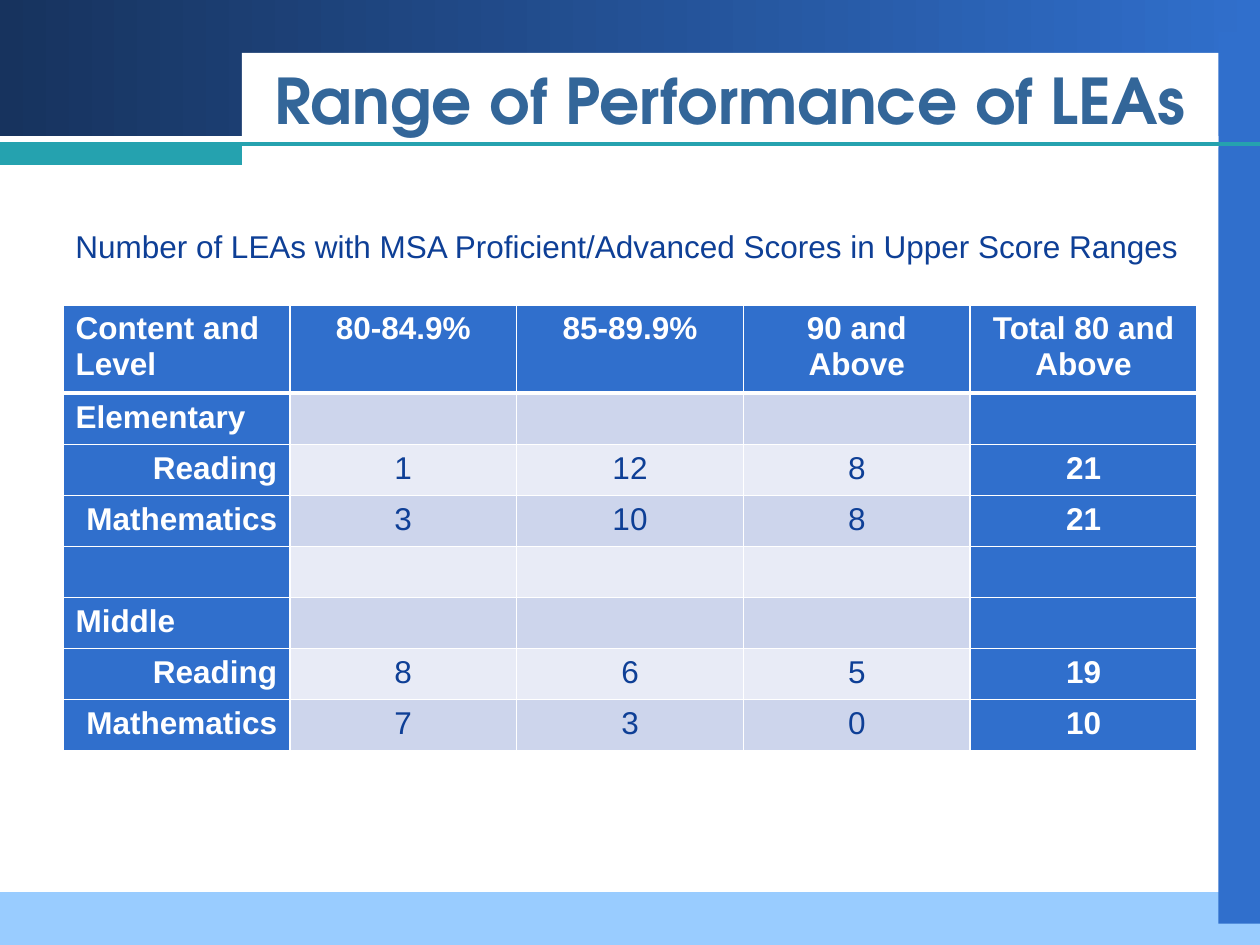
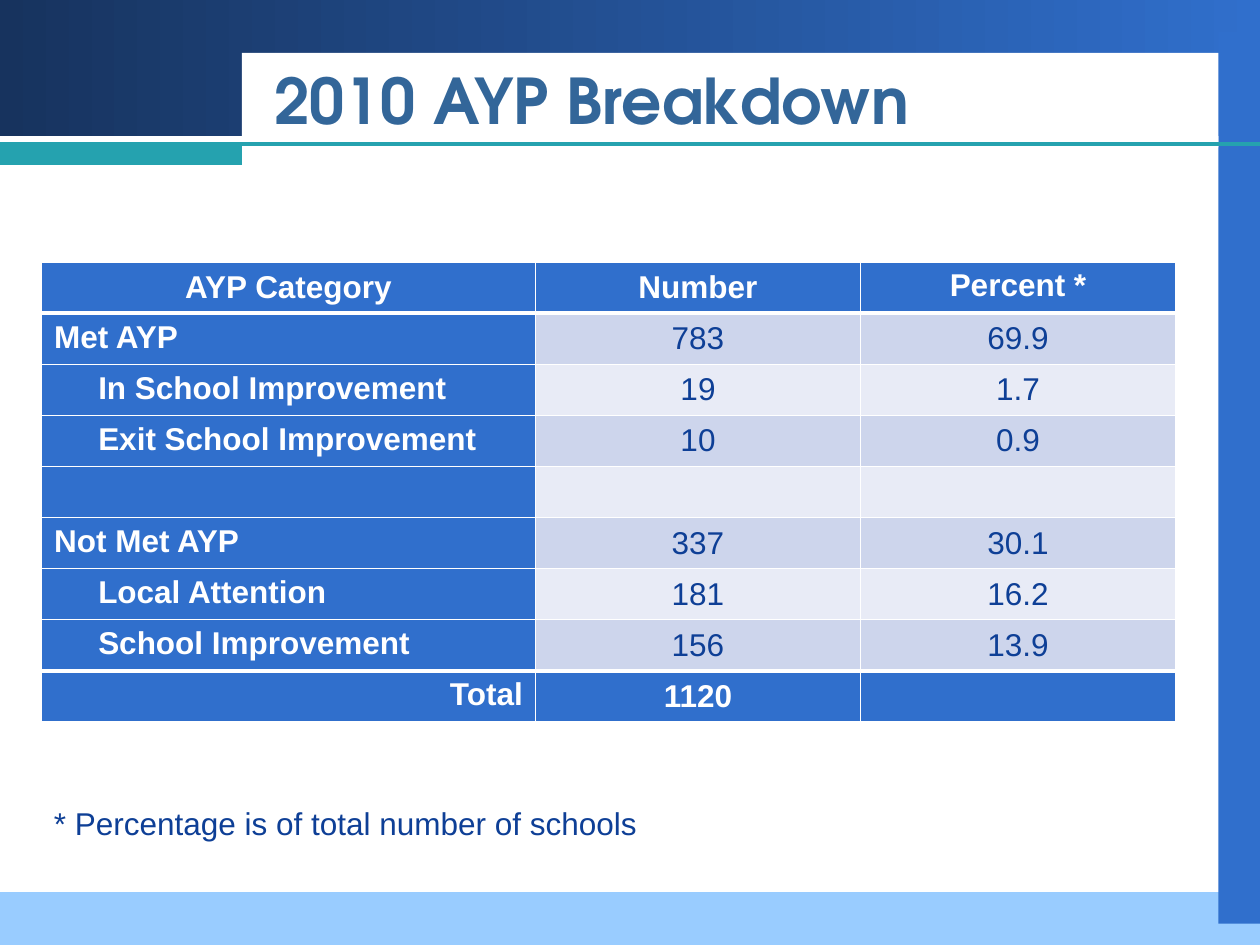
"""Build two slides of tables on LEA performance and AYP results."""
from dataclasses import dataclass

import lxml.etree
import pptx
import pptx.dml.color
import pptx.enum.dml
import pptx.enum.shapes
import pptx.enum.text
import pptx.oxml.ns
import pptx.util

Inches = pptx.util.Inches
Align = pptx.enum.text.PP_ALIGN
Anchor = pptx.enum.text.MSO_ANCHOR


@dataclass(frozen=True)
class Theme:
    navy: str = "17335E"
    blue: str = "306FCC"
    sky: str = "99CCFF"
    teal: str = "25A2AF"
    white: str = "FFFFFF"
    title: str = "336699"
    text: str = "0E3F96"
    bands: tuple = ("CDD5EC", "E8EBF6")
    title_font: str = "TeX Gyre Adventor"
    body_font: str = "Arial"
    title_size: int = 36
    body_size: int = 18
    rule: float = 2.25
    thin_border: int = 1
    thick_border: int = 3
    row_height: int = Inches(3.65) // 9


THEME = Theme()
GROUP = {"align": Align.LEFT}
RIGHT = {"align": Align.RIGHT}
INDENT = {"align": Align.LEFT, "indent": Inches(0.35)}
CENTER = {"align": Align.CENTER}


def rgb(color):
    return pptx.dml.color.RGBColor.from_string(color)


def write_text(frame, text, *, size=THEME.body_size, font=THEME.body_font,
               color=THEME.text, bold=False, align=Align.LEFT):
    paragraph = frame.paragraphs[0]
    paragraph.alignment = align
    if text:
        run = paragraph.add_run()
        run.text = text
        run.font.size = pptx.util.Pt(size)
        run.font.name = font
        run.font.bold = bold
        run.font.color.rgb = rgb(color)


class SlideBuilder:
    def __init__(self, theme):
        self.theme = theme
        self.deck = pptx.Presentation()
        self.deck.slide_width, self.deck.slide_height = Inches(10), Inches(7.5)
        self.slide = None

    def start(self, title):
        theme = self.theme
        self.slide = self.deck.slides.add_slide(self.deck.slide_layouts[6])
        self.band(0, 0, 10, 1.08, theme.navy, theme.blue)
        self.band(0, 7.08, 10, 0.42, theme.sky)
        self.band(9.67, 0.25, 0.33, 7.08, theme.blue)
        self.band(1.92, 0.42, 7.75, 0.75, theme.white)
        self.rule(0, 10, 1.14)
        self.band(0, 1.14, 1.92, 0.17, theme.teal)
        heading = self.text(2.08, 0.5, 7.5, 0.58, title, size=theme.title_size,
                            font=theme.title_font, color=theme.title, bold=True)
        heading.vertical_anchor = Anchor.MIDDLE

    def band(self, left, top, width, height, color, end_color=None):
        band = self.slide.shapes.add_shape(
            pptx.enum.shapes.MSO_SHAPE.RECTANGLE,
            Inches(left), Inches(top), Inches(width), Inches(height))
        band.shadow.inherit = False
        band.line.fill.background()
        if end_color:
            band.fill.gradient()
            band.fill.gradient_angle = 0
            for stop, stop_color in zip(band.fill.gradient_stops, (color, end_color)):
                stop.color.rgb = rgb(stop_color)
        else:
            band.fill.solid()
            band.fill.fore_color.rgb = rgb(color)

    def rule(self, left, right, top):
        rule = self.slide.shapes.add_connector(
            pptx.enum.shapes.MSO_CONNECTOR.STRAIGHT,
            Inches(left), Inches(top), Inches(right), Inches(top))
        rule.line.color.rgb = rgb(self.theme.teal)
        rule.line.width = pptx.util.Pt(self.theme.rule)
        lxml.etree.SubElement(rule._element.spPr, pptx.oxml.ns.qn("a:effectLst"))

    def text(self, left, top, width, height, text, **text_format):
        frame = self.slide.shapes.add_textbox(
            Inches(left), Inches(top), Inches(width), Inches(height)).text_frame
        frame.word_wrap = True
        write_text(frame, text, **text_format)
        return frame

    def note(self, left, top, width, text):
        frame = self.text(left, top, width, 0.4, text)
        frame.auto_size = pptx.enum.text.MSO_AUTO_SIZE.SHAPE_TO_FIT_TEXT

    def borders(self, cell, top, bottom):
        properties = cell._tc.get_or_add_tcPr()
        thin = self.theme.thin_border
        for side, width in zip("LRTB", (thin, thin, top, bottom)):
            line = lxml.etree.SubElement(properties, pptx.oxml.ns.qn(f"a:ln{side}"),
                                         w=str(pptx.util.Pt(width)))
            fill = lxml.etree.SubElement(line, pptx.oxml.ns.qn("a:solidFill"))
            lxml.etree.SubElement(fill, pptx.oxml.ns.qn("a:srgbClr"),
                                  val=self.theme.white)

    def table(self, left, top, widths, header_height, rows, accent_columns=(0,),
              total_row=None, body_anchor=Anchor.TOP):
        theme = self.theme
        heights = [header_height] + [theme.row_height] * (len(rows) - 1)
        table = self.slide.shapes.add_table(
            len(rows), len(widths), Inches(left), Inches(top),
            Inches(sum(widths)), sum(heights)).table
        for column, width in zip(table.columns, widths):
            column.width = Inches(width)
        thick_rules = {1, total_row}
        for r, (label_format, *texts) in enumerate(rows):
            table.rows[r].height = heights[r]
            top_border, bottom_border = (
                theme.thick_border if edge in thick_rules else theme.thin_border
                for edge in (r, r + 1))
            for c, text in enumerate(texts):
                cell = table.cell(r, c)
                accent = r in (0, total_row) or c in accent_columns
                cell_format = dict(CENTER if c else label_format)
                indent = cell_format.pop("indent", 0)
                cell.margin_left = Inches(0.1) + indent
                centered = cell_format["align"] == Align.CENTER
                cell.vertical_anchor = body_anchor if centered else Anchor.TOP
                self.borders(cell, top_border, bottom_border)
                cell.fill.solid()
                cell.fill.fore_color.rgb = rgb(
                    theme.blue if accent else theme.bands[(r - 1) % 2])
                write_text(cell.text_frame, text, bold=accent,
                           color=theme.white if accent else theme.text, **cell_format)
        return table


def performance_slide(builder):
    builder.start("Range of Performance of LEAs")
    builder.table(0.5, 2.42, [1.8] * 5, Inches(0.65), [
        (GROUP, "Content and Level", "80-84.9%", "85-89.9%", "90 and Above",
         "Total 80 and Above"),
        (GROUP, "Elementary", "", "", "", ""),
        (RIGHT, "Reading", "1", "12", "8", "21"),
        (RIGHT, "Mathematics", "3", "10", "8", "21"),
        (GROUP, "", "", "", "", ""),
        (GROUP, "Middle", "", "", "", ""),
        (RIGHT, "Reading", "8", "6", "5", "19"),
        (RIGHT, "Mathematics", "7", "3", "0", "10"),
    ], accent_columns=(0, 4))
    builder.note(0.5, 1.75, 9, "Number of LEAs with MSA Proficient/Advanced Scores "
                               "in Upper Score Ranges")


def breakdown_slide(builder):
    builder.start("2010 AYP Breakdown")
    breakdown = builder.table(0.33, 2.08, [3.92, 2.58, 2.5], THEME.row_height, [
        (CENTER, "AYP Category", "Number", "Percent *"),
        (GROUP, "Met AYP", "783", "69.9"),
        (INDENT, "In School Improvement", "19", "1.7"),
        (INDENT, "Exit School Improvement", "10", "0.9"),
        (GROUP, "", "", ""),
        (GROUP, "Not Met AYP", "337", "30.1"),
        (INDENT, "Local Attention", "181", "16.2"),
        (INDENT, "School Improvement", "156", "13.9"),
        (RIGHT, "Total", "1120", ""),
    ], total_row=8, body_anchor=Anchor.MIDDLE)
    breakdown.cell(0, 2).vertical_anchor = Anchor.TOP
    builder.note(0.33, 6.33, 6.42, "* Percentage is of total number of schools")


def main():
    builder = SlideBuilder(THEME)
    performance_slide(builder)
    breakdown_slide(builder)
    builder.deck.save("out.pptx")


if __name__ == "__main__":
    main()
